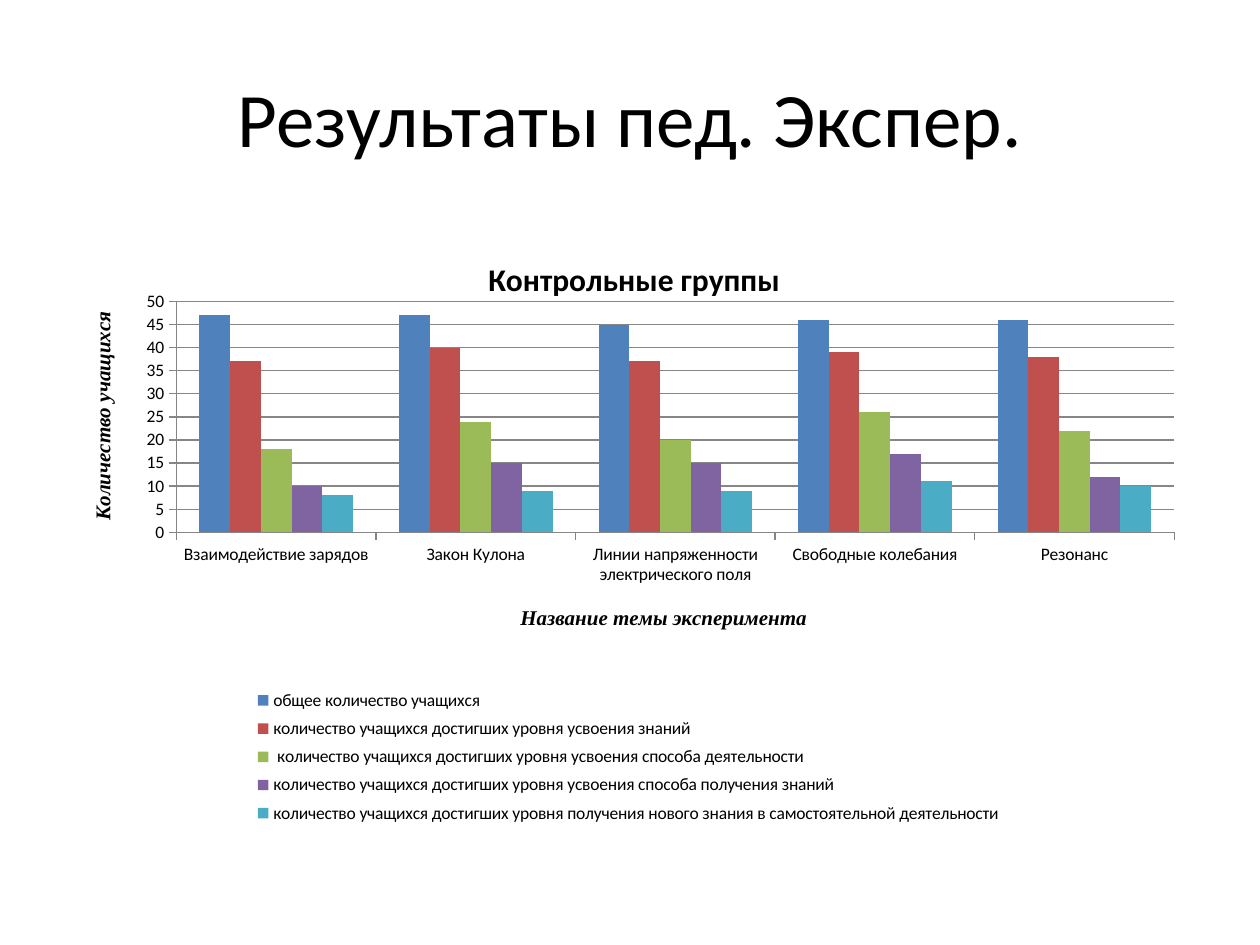
from pptx import Presentation
from pptx.chart.data import CategoryChartData as ChartData
from pptx.dml.color import RGBColor
from pptx.enum.chart import XL_CHART_TYPE as Kind, XL_LEGEND_POSITION as Side
from pptx.enum.chart import XL_TICK_MARK as Tick
from pptx.enum.text import MSO_ANCHOR as Anchor, PP_ALIGN as Align
from pptx.oxml import parse_xml
from pptx.oxml.ns import nsdecls, qn
from pptx.util import Inches, Pt

BLACK = RGBColor(0, 0, 0)
GRAY = RGBColor(0x86, 0x86, 0x86)
BLUE = RGBColor(0x4F, 0x81, 0xBD)
RED = RGBColor(0xC0, 0x50, 0x4D)
GREEN = RGBColor(0x9B, 0xBB, 0x59)
PURPLE = RGBColor(0x80, 0x64, 0xA2)
TEAL = RGBColor(0x4B, 0xAC, 0xC6)
SANS, SERIF = "Calibri", "Times New Roman"

TITLE = "Результаты пед. Экспер."
HEAD = "Контрольные группы"
X_NAME = "Название темы эксперимента"
Y_NAME = "Количество учащихся"
TOPICS = [
    "Взаимодействие зарядов",
    "Закон Кулона",
    "Линии напряженности электрического поля",
    "Свободные колебания",
    "Резонанс",
]
SERIES = [
    ("общее количество учащихся ", BLUE, (47, 47, 45, 46, 46)),
    ("количество учащихся достигших уровня усвоения знаний",
     RED, (37, 40, 37, 39, 38)),
    (" количество учащихся достигших уровня усвоения способа деятельности",
     GREEN, (18, 24, 20, 26, 22)),
    ("количество учащихся достигших уровня усвоения способа получения знаний",
     PURPLE, (10, 15, 15, 17, 12)),
    ("количество учащихся достигших уровня получения нового знания "
     "в самостоятельной деятельности ",
     TEAL, (8, 9, 9, 11, 10)),
]


def style(font, size, name=SANS, bold=False, italic=False):
    font.size, font.name = Pt(size), name
    font.bold, font.italic = bold, italic
    font.color.rgb = BLACK


def write(frame, text, align=Align.CENTER, **look):
    para = frame.paragraphs[0]
    para.alignment = align
    run = para.add_run()
    run.text = text
    style(run.font, **look)


def place(node, x, y, w=None, h=None, inner=False):
    """Fix a chart part at fractions of the chart's width and height."""
    old = node.find(qn("c:layout"))
    if old is not None:
        node.remove(old)
    marks = [("xMode", "edge"), ("yMode", "edge"),
             ("x", x), ("y", y), ("w", w), ("h", h)]
    if inner:
        marks.insert(0, ("layoutTarget", "inner"))
    body = "".join(f'<c:{tag} val="{val}"/>'
                   for tag, val in marks if val is not None)
    layout = parse_xml(f'<c:layout {nsdecls("c")}><c:manualLayout>{body}'
                       '</c:manualLayout></c:layout>')
    after = node.find(qn("c:overlay"))
    if after is None:
        node.insert(0, layout)
    else:
        after.addprevious(layout)


def add_chart(slide):
    data = ChartData()
    data.categories = TOPICS
    for name, _, vals in SERIES:
        data.add_series(name, vals)
    chart = slide.shapes.add_chart(
        Kind.COLUMN_CLUSTERED, Inches(0.5), Inches(1.75),
        Inches(9), Inches(4.95), data).chart
    style(chart.font, 10)

    plot = chart.plots[0]
    plot.gap_width, plot.overlap = 150, 0
    plot.vary_by_categories = False
    for bars, (_, color, _) in zip(plot.series, SERIES):
        bars.format.fill.solid()
        bars.format.fill.fore_color.rgb = color

    chart.has_title = True
    write(chart.chart_title.text_frame, HEAD, size=18, bold=True)
    place(chart.chart_title._element if hasattr(chart.chart_title, "_element")
          else chart.chart_title.element, 0.37, 0.05)

    x_axis, y_axis = chart.category_axis, chart.value_axis
    for axis, name, x, y in ((x_axis, X_NAME, 0.4, 0.61),
                             (y_axis, Y_NAME, 0.02, 0.14)):
        write(axis.axis_title.text_frame, name,
              size=12, name=SERIF, bold=True, italic=True)
        place(axis.axis_title._element, x, y)
        axis.major_tick_mark = Tick.OUTSIDE
        axis.minor_tick_mark = Tick.NONE
        axis.format.line.color.rgb = GRAY
        axis.format.line.width = Pt(0.75)
    y_axis.minimum_scale, y_axis.maximum_scale = 0, 50
    y_axis.major_unit = 5
    grid = y_axis.major_gridlines.format.line
    grid.color.rgb, grid.width = GRAY, Pt(0.75)

    chart.has_legend = True
    legend = chart.legend
    legend.position = Side.BOTTOM
    legend.include_in_layout = False
    style(legend.font, 10)
    place(legend._element, 0.16, 0.74, 0.68, 0.24)
    area = chart._chartSpace.chart.plotArea
    place(area, 0.1, 0.13, 0.88, 0.37, inner=True)


def main():
    deck = Presentation()
    deck.slide_width, deck.slide_height = Inches(10), Inches(7.5)
    slide = deck.slides.add_slide(deck.slide_layouts[5])
    title = slide.shapes.title
    title.left, title.top = Inches(0.5), Inches(0.3)
    title.width, title.height = Inches(9), Inches(1.25)
    title.text_frame.vertical_anchor = Anchor.MIDDLE
    write(title.text_frame, TITLE, size=44)
    add_chart(slide)
    deck.save("out.pptx")


if __name__ == "__main__":
    main()
